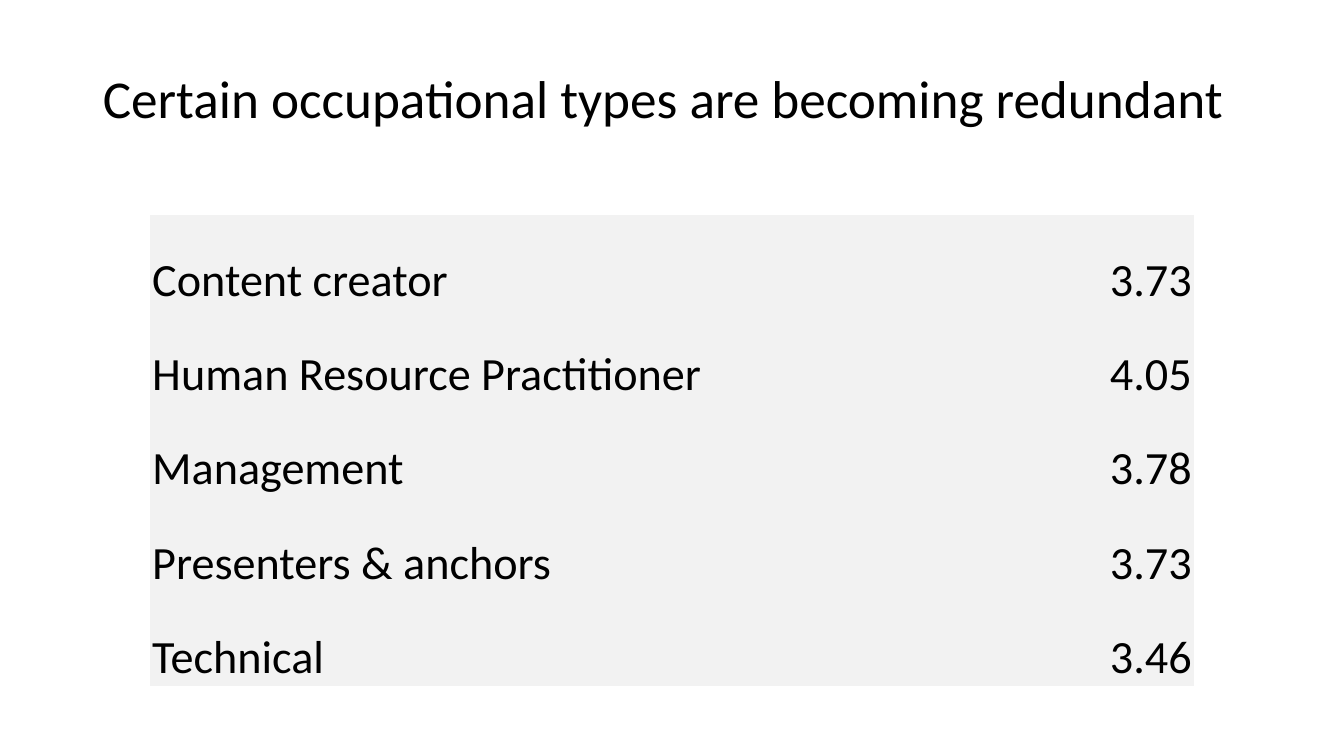
from dataclasses import dataclass

from pptx import Presentation
from pptx.dml.color import RGBColor
from pptx.enum.text import MSO_ANCHOR, MSO_AUTO_SIZE, PP_ALIGN
from pptx.util import Inches, Pt

BOTTOM = MSO_ANCHOR.BOTTOM
NO_AUTOFIT = MSO_AUTO_SIZE.NONE
LEFT, RIGHT = PP_ALIGN.LEFT, PP_ALIGN.RIGHT
TITLE_ONLY = 5
PLAIN_TABLE_STYLE = "{2D5ABB26-0587-4C30-8999-92F81FD0307C}"

TITLE = "Certain occupational types are becoming redundant"
OCCUPATIONS = [
    ("Content creator", "3.73"),
    ("Human Resource Practitioner", "4.05"),
    ("Management", "3.78"),
    ("Presenters & anchors", "3.73"),
    ("Technical", "3.46"),
]
ALIGNMENTS = (LEFT, RIGHT)
COLUMN_WIDTHS = (7.59, 2.76)
ROW_HEIGHT = 0.935


@dataclass(frozen=True)
class Theme:
    """Colours, font and type sizes of the slide."""

    font: str = "Calibri"
    text: RGBColor = RGBColor(0x00, 0x00, 0x00)
    cell: RGBColor = RGBColor(0xF2, 0xF2, 0xF2)
    title_size: float = 38
    cell_size: float = 33


THEME = Theme()


def format_paragraph(paragraph, size, alignment):
    """Apply the theme's type to every run of a paragraph."""
    paragraph.alignment = alignment
    for run in paragraph.runs:
        run.font.name = THEME.font
        run.font.size = Pt(size)
        run.font.color.rgb = THEME.text


def place_title(slide, text):
    """Move, fill and format the title placeholder."""
    title = slide.shapes.title
    title.left, title.top = Inches(0.92), Inches(0.32)
    title.width, title.height = Inches(11.5), Inches(1.02)
    frame = title.text_frame
    frame.text = text
    frame.auto_size = NO_AUTOFIT
    frame.word_wrap = True
    frame.vertical_anchor = BOTTOM
    paragraph = frame.paragraphs[0]
    paragraph.line_spacing = 0.9
    format_paragraph(paragraph, THEME.title_size, LEFT)


def fill_cell(cell, text, alignment):
    """Write one shaded table cell with its text at the bottom."""
    cell.fill.solid()
    cell.fill.fore_color.rgb = THEME.cell
    cell.vertical_anchor = BOTTOM
    cell.margin_left = cell.margin_right = Inches(0.02)
    cell.margin_top, cell.margin_bottom = Inches(0.28), 0
    cell.text_frame.text = text
    format_paragraph(cell.text_frame.paragraphs[0], THEME.cell_size, alignment)


def add_score_table(slide, rows):
    """Add the borderless table of occupations and scores."""
    frame = slide.shapes.add_table(
        len(rows), len(COLUMN_WIDTHS), Inches(1.49), Inches(2.13),
        Inches(sum(COLUMN_WIDTHS)), Inches(ROW_HEIGHT * len(rows)))
    table = frame.table
    table.first_row = table.horz_banding = False
    for style in frame.element.xpath(".//a:tableStyleId"):
        style.text = PLAIN_TABLE_STYLE
    for column, width in zip(table.columns, COLUMN_WIDTHS):
        column.width = Inches(width)
    for row, values in zip(table.rows, rows):
        row.height = Inches(ROW_HEIGHT)
        for cell, value, alignment in zip(row.cells, values, ALIGNMENTS):
            fill_cell(cell, value, alignment)


def main():
    """Build and save the slide."""
    presentation = Presentation()
    presentation.slide_width = Inches(13.33)
    presentation.slide_height = Inches(7.5)
    slide = presentation.slides.add_slide(presentation.slide_layouts[TITLE_ONLY])
    place_title(slide, TITLE)
    add_score_table(slide, OCCUPATIONS)
    presentation.save("out.pptx")


if __name__ == "__main__":
    main()
